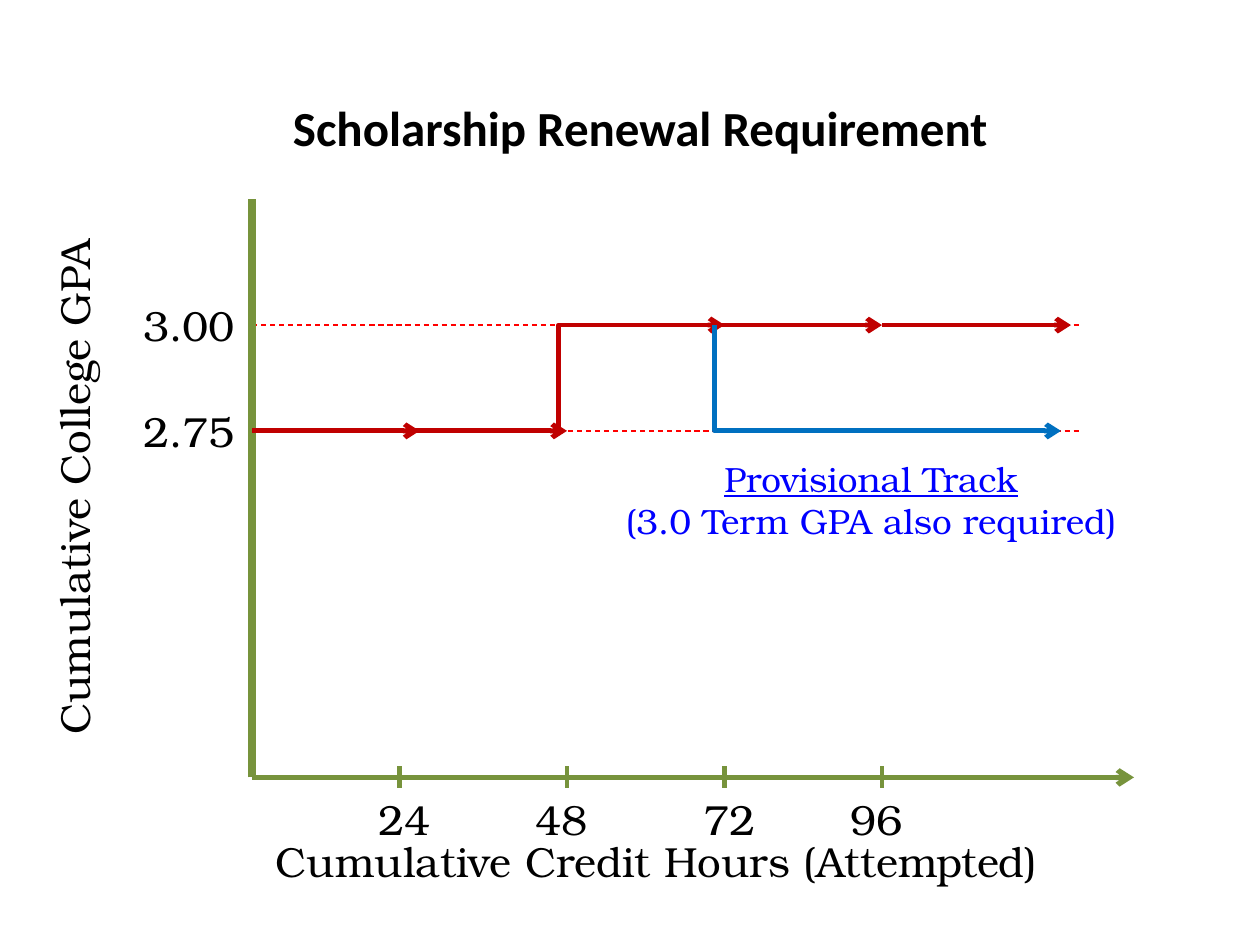
from lxml import etree
from pptx import Presentation
from pptx.dml.color import RGBColor
from pptx.enum.dml import MSO_LINE
from pptx.enum.shapes import MSO_CONNECTOR
from pptx.enum.text import MSO_ANCHOR, PP_ALIGN
from pptx.oxml.ns import qn
from pptx.util import Inches, Pt

STRAIGHT = MSO_CONNECTOR.STRAIGHT
ELBOW = MSO_CONNECTOR.ELBOW
DASH = MSO_LINE.DASH
CENTER = PP_ALIGN.CENTER
MIDDLE = MSO_ANCHOR.MIDDLE

COLORS = {
    "text": "000000",
    "axis": "77933C",
    "guide": "FF0000",
    "regular": "C00000",
    "provisional": "0070C0",
    "note": "0000FF",
}
SERIF = "TeX Gyre Bonum"
SANS = "Calibri"

ORIGIN_X, AXIS_Y = 2, 6.17
GPA_LEVELS = {"3.00": 2.58, "2.75": 3.42}
HIGH, LOW = GPA_LEVELS.values()
HOURS = [("24", 3.17, 2.75), ("48", 4.5, 4), ("72", 5.75, 5.33), ("96", 7, 6.5)]


def add_line(page, start, end, color, width=2.75, kind=STRAIGHT, arrow=False):
    line = page.shapes.add_connector(kind, *map(Inches, start + end))
    line.line.color.rgb = RGBColor.from_string(COLORS[color])
    line.line.width = Pt(width)
    properties = line._element.spPr
    if arrow:
        etree.SubElement(properties.find(qn("a:ln")), qn("a:tailEnd"), type="arrow")
    etree.SubElement(properties, qn("a:effectLst"))
    return line


def add_guide(page, y):
    guide = add_line(page, (ORIGIN_X, y), (8.58, y), "guide", 0.75)
    guide.line.dash_style = DASH


def add_step(page, start, end, color, bend):
    step = add_line(page, start, end, color, kind=ELBOW, arrow=True)
    geometry = step._element.spPr.find(qn("a:prstGeom"))
    etree.SubElement(geometry.find(qn("a:avLst")), qn("a:gd"),
                     name="adj1", fmla=f"val {bend}")


def add_text(page, place, lines, size=24, font=SERIF, color="text", bold=False):
    box = page.shapes.add_textbox(*map(Inches, place))
    frame = box.text_frame
    frame.word_wrap = True
    frame.text = "\n".join(lines)
    for para in frame.paragraphs:
        para.alignment = CENTER
        for span in para.runs:
            span.font.name = font
            span.font.size = Pt(size)
            span.font.bold = bold
            span.font.color.rgb = RGBColor.from_string(COLORS[color])
    return box


def add_axes(page):
    add_line(page, (ORIGIN_X, AXIS_Y), (9, AXIS_Y), "axis", 3, arrow=True)
    for label, tick, left in HOURS:
        add_line(page, (tick, 6.08), (tick, 6.25), "axis")
        add_text(page, (left, 6.25, 0.92, 0.5), [label])
    add_text(page, (1.67, 6.58, 7.08, 0.5), ["Cumulative Credit Hours (Attempted)"])
    add_line(page, (ORIGIN_X, AXIS_Y), (ORIGIN_X, 1.58), "axis", 5)
    for label, y in GPA_LEVELS.items():
        add_text(page, (1, y - 0.25, 1, 0.5), [label])
    title = add_text(page, (-1.54, 3.62, 4.25, 0.5), ["Cumulative College GPA"])
    title.rotation = 270


def add_tracks(page):
    add_step(page, (4.42, LOW), (5.75, HIGH), "regular", 1100)
    for start, end in [(5.67, 7), (7, 8.5)]:
        add_line(page, (start, HIGH), (end, HIGH), "regular", arrow=True)
    add_step(page, (5.67, HIGH), (8.42, LOW), "provisional", 0)
    for start, end in [(3.25, 4.5), (ORIGIN_X, 3.33)]:
        add_line(page, (start, LOW), (end, LOW), "regular", arrow=True)


def main():
    deck = Presentation()
    deck.slide_width, deck.slide_height = Inches(10), Inches(7.5)
    page = deck.slides.add_slide(deck.slide_layouts[6])
    for y in GPA_LEVELS.values():
        add_guide(page, y)
    add_axes(page)
    add_tracks(page)
    note = add_text(page, (4.83, 3.58, 4.17, 0.77),
                    ["Provisional Track", "(3.0 Term GPA also required)"],
                    size=20, color="note")
    note.text_frame.paragraphs[0].runs[0].font.underline = True
    heading = add_text(page, (0.83, 0.42, 8.5, 1.17),
                       ["Scholarship Renewal Requirement"],
                       size=28, font=SANS, bold=True)
    heading.text_frame.vertical_anchor = MIDDLE
    deck.save("out.pptx")


if __name__ == "__main__":
    main()
